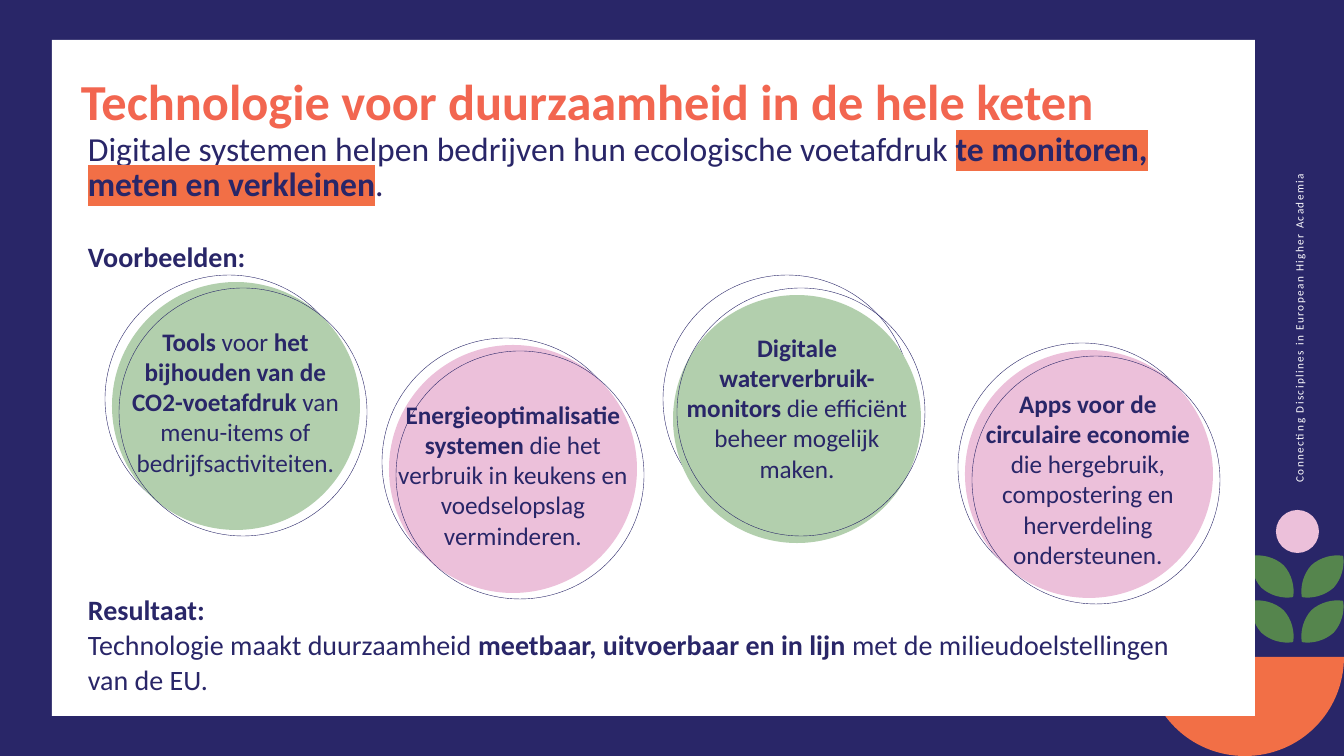
from lxml.etree import Element, SubElement
from pptx import Presentation
from pptx.dml.color import RGBColor
from pptx.enum.shapes import MSO_SHAPE
from pptx.enum.text import PP_ALIGN
from pptx.oxml.ns import qn
from pptx.util import Pt

PX = 12192000 / 1344
NAVY = RGBColor(0x29, 0x26, 0x68)
WHITE = RGBColor(0xFF, 0xFF, 0xFF)
CORAL = RGBColor(0xF2, 0x66, 0x50)
ORANGE = RGBColor(0xF2, 0x6F, 0x46)
LEAF_GREEN = RGBColor(0x55, 0x85, 0x4D)
SAGE = RGBColor(0xB2, 0xCF, 0xAD)
PINK = RGBColor(0xEC, 0xC0, 0xDA)
DIAMETER = 248
LEAF_SIZE = 43
LEAF_CURVE = [
    (0.24, 0.76), (0.05, 0.55), (-0.02, 0.26), (0.02, 0.02),
    (0.26, -0.02), (0.55, 0.05), (0.76, 0.24),
    (0.95, 0.45), (1.02, 0.74), (0.98, 0.98),
    (0.74, 1.02), (0.45, 0.95), (0.24, 0.76),
]
BOWL_CURVE = [
    (1344, 657), (1344, 712), (1300, 756), (1245, 756),
    (1190, 756), (1146, 712), (1146, 657),
]

EXAMPLES = [
    ((105, 275), (7, 7), SAGE, (107, 321, 257, 163), [
        ("Tools ", True), ("voor", False),
        (" het bijhouden van de CO2-voetafdruk ", True),
        ("van menu-items of bedrijfsactiviteiten.", False)]),
    ((382, 338), (7, 7), PINK, (388, 394, 250, 163), [
        ("Energieoptimalisatie systemen ", True),
        ("die het verbruik in keukens en voedselopslag verminderen.", False)]),
    ((663, 275), (10, 20), SAGE, (673, 327, 248, 163), [
        ("Digitale waterverbruik-monitors ", True),
        ("die efficiënt beheer mogelijk maken.", False)]),
    ((958, 343), (7, 7), PINK, (964, 383, 248, 194), [
        ("Apps voor de circulaire economie ", True),
        ("die hergebruik, compostering en herverdeling ondersteunen.", False)]),
]

BODY = [
    (24, 0, [
        ("Digitale systemen helpen bedrijven hun ecologische voetafdruk ", False),
        ("te monitoren, meten en verkleinen", True), (".", False)]),
    (20, 24.8, [("Voorbeelden:", True)]),
    (20, 227.6, [("Resultaat:", True)]),
    (20, 0, [
        ("Technologie maakt duurzaamheid ", False),
        ("meetbaar, uitvoerbaar en in lijn ", True),
        ("met de milieudoelstellingen van de EU.", False)]),
]


def px(value):
    return round(value * PX)


class SlideBuilder:
    def __init__(self, slide, font="Calibri"):
        self.slide = slide
        self.font = font

    def paint(self, shape, fill, line=None):
        shape.shadow.inherit = False
        if fill is None:
            shape.fill.background()
        else:
            shape.fill.solid()
            shape.fill.fore_color.rgb = fill
        if line is None:
            shape.line.fill.background()
        else:
            shape.line.color.rgb = line
            shape.line.width = Pt(0.28)

    def preset(self, kind, box, fill, line=None):
        shape = self.slide.shapes.add_shape(kind, *map(px, box))
        self.paint(shape, fill, line)

    def rectangle(self, box, fill):
        self.preset(MSO_SHAPE.RECTANGLE, box, fill)

    def circle(self, left, top, diameter, fill, line=None):
        self.preset(MSO_SHAPE.OVAL, (left, top, diameter, diameter), fill, line)

    def curved(self, points, fill):
        corners = [(px(x), px(y)) for x, y in points]
        builder = self.slide.shapes.build_freeform(*corners[0], scale=1.0)
        builder.add_line_segments(corners[1:], close=True)
        shape = builder.convert_to_shape()
        geometry = shape._element.find(".//" + qn("a:path"))
        segments = geometry.findall(qn("a:lnTo"))[:len(points) - 1]
        for start in range(0, len(segments), 3):
            curve = Element(qn("a:cubicBezTo"))
            segments[start].addprevious(curve)
            for segment in segments[start:start + 3]:
                curve.append(segment[0])
                geometry.remove(segment)
        self.paint(shape, fill)

    def leaf(self, left, top, mirrored):
        self.curved([(left + LEAF_SIZE * (1 - x if mirrored else x),
                      top + LEAF_SIZE * y) for x, y in LEAF_CURVE], LEAF_GREEN)

    def text(self, box, paragraphs, color=NAVY, align=PP_ALIGN.LEFT,
             line_spacing=None, highlight=None, tracking=None, rotation=0):
        shape = self.slide.shapes.add_textbox(*map(px, box))
        shape.rotation = rotation
        frame = shape.text_frame
        frame.word_wrap = True
        for index, (size, space_before, runs) in enumerate(paragraphs):
            paragraph = frame.add_paragraph() if index else frame.paragraphs[0]
            paragraph.alignment = align
            paragraph.line_spacing = line_spacing
            paragraph.space_before = Pt(space_before)
            for content, bold in runs:
                run = paragraph.add_run()
                run.text = content
                run.font.size = Pt(size)
                run.font.bold = bold
                run.font.color.rgb = color
                properties = run._r.get_or_add_rPr()
                if content == highlight:
                    mark = SubElement(properties, qn("a:highlight"))
                    SubElement(mark, qn("a:srgbClr")).set("val", str(ORANGE))
                if tracking:
                    properties.set("spc", str(tracking))
                run.font.name = self.font

    def example(self, origin, disc_offset, fill):
        left, top = origin
        self.circle(left, top, DIAMETER, None, NAVY)
        self.circle(left + disc_offset[0], top + disc_offset[1], DIAMETER, fill)
        self.circle(left + 14, top + 13, DIAMETER, None, NAVY)


def main():
    presentation = Presentation()
    presentation.slide_width = px(1344)
    presentation.slide_height = px(756)
    slide = presentation.slides.add_slide(presentation.slide_layouts[6])
    builder = SlideBuilder(slide)

    builder.rectangle((0, 0, 1344, 756), NAVY)
    builder.text((1059, 240, 481, 24), [
        (8, 0, [("Connecting Disciplines in European Higher Academia", False)])],
        WHITE, tracking=100, rotation=270)
    builder.curved(BOWL_CURVE, ORANGE)
    for top in (600, 555):
        for left, mirrored in ((1251, False), (1301, True)):
            builder.leaf(left, top, mirrored)
    builder.circle(1276, 510, 43, PINK)
    builder.rectangle((52, 40, 1203, 676), WHITE)

    builder.text((71, 72, 1165, 89), [
        (36, 0, [("Technologie voor duurzaamheid in de hele keten", True)])],
        CORAL, line_spacing=0.9)
    builder.text((78, 129, 1126, 484), BODY, line_spacing=Pt(24.8),
                 highlight="te monitoren, meten en verkleinen")

    for origin, disc_offset, fill, _, _ in EXAMPLES:
        builder.example(origin, disc_offset, fill)
    for _, _, _, box, runs in EXAMPLES:
        builder.text(box, [(18, 0, runs)], align=PP_ALIGN.CENTER)

    presentation.save("out.pptx")


if __name__ == "__main__":
    main()
